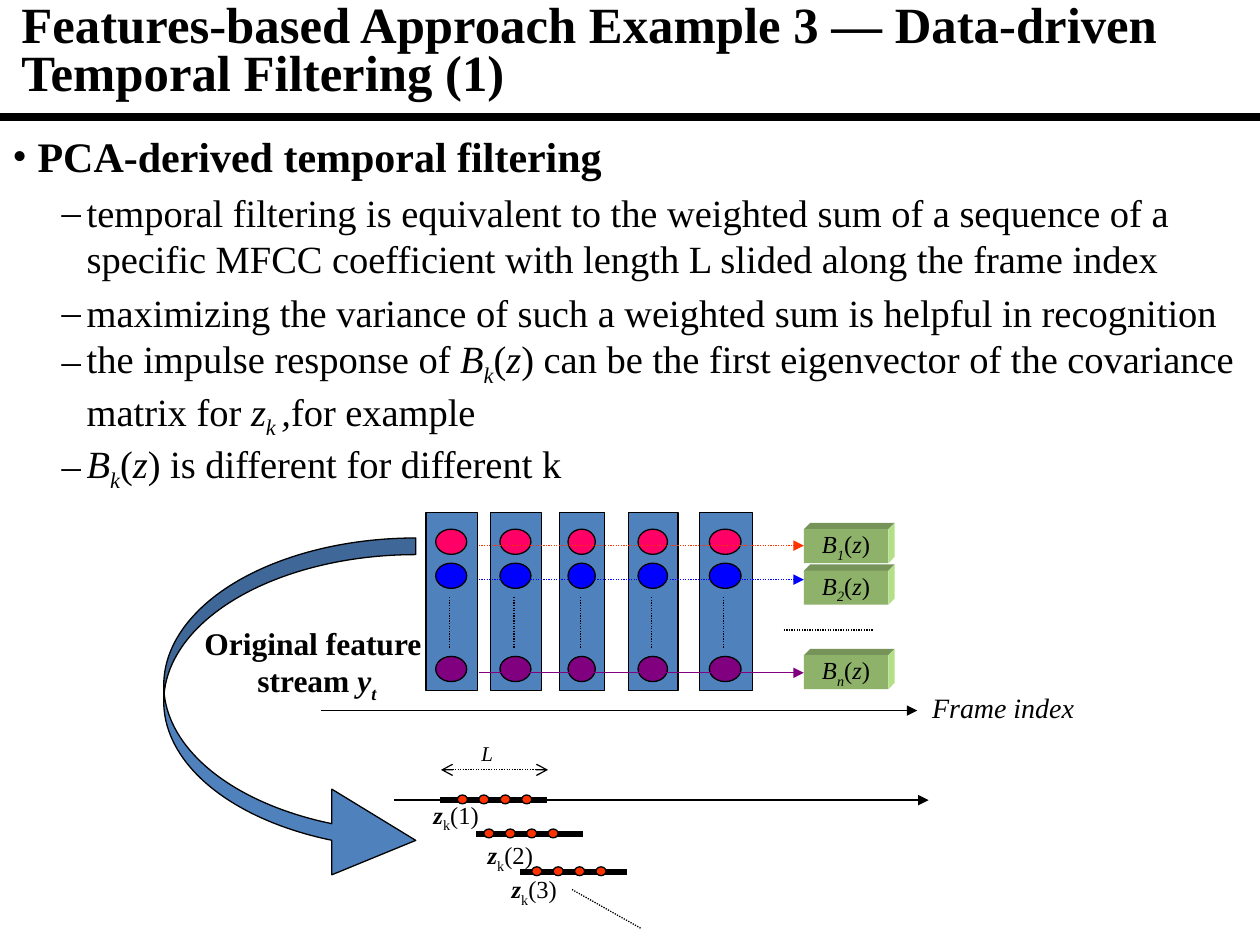
from lxml.etree import SubElement
from pptx import Presentation
from pptx.dml.color import RGBColor
from pptx.enum.dml import MSO_LINE as Dash
from pptx.enum.shapes import MSO_CONNECTOR as Connector, MSO_SHAPE as Shape
from pptx.enum.text import MSO_ANCHOR as Anchor, PP_ALIGN as Align
from pptx.oxml.ns import qn
from pptx.util import Emu, Inches, Pt

COLORS = {
    "black": "000000", "column": "4F81BD", "pink": "FF0066", "blue": "0000FF",
    "purple": "800080", "orange": "FF3300", "front": "8FB26B",
    "top": "76945A", "side": "B3DF86",
}
STYLES = {
    "": {}, "b": {"bold": True}, "i": {"italic": True},
    "bi": {"bold": True, "italic": True},
}
BULLETS = [
    (0, "•", 4.8, [("PCA-derived temporal filtering", "b")]),
    (1, "–", 4.4, [("temporal filtering is equivalent to the weighted sum of a sequence of a "
                    "specific MFCC coefficient with length L slided along the frame index", "")]),
    (1, "–", 4.4, [("maximizing the variance of such a weighted sum is helpful in recognition", "")]),
    (1, "–", 0, [("the impulse response of ", ""), ("B", "i"), ("k", "i_"), ("(", ""), ("z", "i"),
                 (") can be the first eigenvector of the covariance matrix for ", ""),
                 ("z", "i"), ("k ", "i_"), (",", "i"), ("for example", "")]),
    (1, "–", 0, [("B", "i"), ("k", "i_"), ("(", ""), ("z", "i"),
                 (") is different for different k", "")]),
]
COLUMNS = [(3.38, 0.41), (3.89, 0.41), (4.44, 0.36), (4.99, 0.39), (5.55, 0.42)]
FEATURES = [("pink", 4.2), ("blue", 4.47), ("purple", 5.21)]
FILTERS = [("1", 4.2, "orange", Dash.ROUND_DOT), ("2", 4.53, "blue", Dash.ROUND_DOT),
           ("n", 5.2, "purple", None)]
FILTER_ARROWS = [4.33, 4.6, 5.34]
WINDOWS = [("(1)", 3.49, 6.35, 3.63, 3.44, 6.35), ("(2)", 3.78, 6.62, 3.84, 3.87, 6.67),
           ("(3)", 4.13, 6.92, 4.22, 4.06, 6.94)]


class SlideBuilder:
    """Draw styled elements on one slide."""

    font_name = "Times New Roman"

    def __init__(self, slide):
        self.slide = slide

    def color(self, name):
        return RGBColor.from_string(COLORS[name])

    def add_runs(self, paragraph, runs, size):
        for text, style in runs:
            if text == "\n":
                paragraph.add_line_break()
                continue
            run = paragraph.add_run()
            run.text = text
            values = {"name": self.font_name, "size": Pt(size), "bold": False, "italic": False}
            values.update(STYLES[style.rstrip("_")])
            for key, value in values.items():
                setattr(run.font, key, value)
            run.font.color.rgb = self.color("black")
            if style.endswith("_"):
                run._r.get_or_add_rPr().set("baseline", "-25000")

    def title(self, box, text, size):
        shape = self.slide.shapes.title
        shape.left, shape.top, shape.width, shape.height = map(Inches, box)
        frame = shape.text_frame
        frame.vertical_anchor = Anchor.MIDDLE
        paragraph = frame.paragraphs[0]
        paragraph.alignment = Align.LEFT
        paragraph.line_spacing = 0.8
        self.add_runs(paragraph, [(text, "b")], size)

    def bullets(self, box, items):
        frame = self.slide.shapes.add_textbox(*map(Inches, box)).text_frame
        frame.word_wrap = True
        for index, (level, mark, space, runs) in enumerate(items):
            paragraph = frame.add_paragraph() if index else frame.paragraphs[0]
            paragraph.level = level
            paragraph.space_before = Pt(space)
            properties = paragraph._p.get_or_add_pPr()
            properties.set("marL", str(Inches((0.2, 0.59)[level])))
            properties.set("indent", str(Inches(-0.2)))
            SubElement(properties, qn("a:buFont")).set("typeface", self.font_name)
            SubElement(properties, qn("a:buChar")).set("char", mark)
            self.add_runs(paragraph, runs, (24, 22)[level])

    def text(self, box, runs, size, align=Align.LEFT, wrap=False, inset=None):
        frame = self.slide.shapes.add_textbox(*map(Inches, box)).text_frame
        frame.word_wrap = wrap
        if inset is not None:
            for side in ("left", "right", "top", "bottom"):
                setattr(frame, f"margin_{side}", Inches(inset))
        frame.paragraphs[0].alignment = align
        self.add_runs(frame.paragraphs[0], runs, size)

    def paint(self, shape, fill, outlined):
        shape.shadow.inherit = False
        shape.fill.solid()
        shape.fill.fore_color.rgb = self.color(fill)
        if outlined:
            shape.line.color.rgb = self.color("black")
            shape.line.width = Pt(0.75)
        else:
            shape.line.fill.background()

    def shape(self, kind, box, fill, outlined=True, adjustments=()):
        shape = self.slide.shapes.add_shape(kind, *map(Inches, box))
        for index, value in enumerate(adjustments):
            shape.adjustments[index] = value
        self.paint(shape, fill, outlined)
        return shape

    def polygon(self, points, fill):
        corners = [(Inches(x), Inches(y)) for x, y in points]
        builder = self.slide.shapes.build_freeform(*corners[0])
        builder.add_line_segments(corners[1:], close=True)
        self.paint(builder.convert_to_shape(Emu(0), Emu(0)), fill, False)

    def block(self, box, runs, size, depth=0.05):
        left, top, width, height = box
        right, bottom = left + width, top + height
        back_right, back_top = right + depth, top - depth
        self.polygon([(left, top), (left + depth, back_top), (back_right, back_top), (right, top)], "top")
        self.polygon([(right, top), (back_right, back_top), (back_right, bottom - depth),
                      (right, bottom)], "side")
        frame = self.shape(Shape.RECTANGLE, box, "front", outlined=False).text_frame
        frame.word_wrap = False
        frame.vertical_anchor = Anchor.MIDDLE
        frame.paragraphs[0].alignment = Align.CENTER
        self.add_runs(frame.paragraphs[0], runs, size)

    def line(self, start, end, color="black", width=0.75, dash=None, head=None, tail=None):
        connector = self.slide.shapes.add_connector(Connector.STRAIGHT, *map(Inches, start + end))
        connector.line.color.rgb = self.color(color)
        connector.line.width = Pt(width)
        if dash:
            connector.line.dash_style = dash
        for tag, kind in (("a:headEnd", head), ("a:tailEnd", tail)):
            if kind:
                SubElement(connector.line._ln, qn(tag)).set("type", kind)
        SubElement(connector._element.spPr, qn("a:effectLst"))


def main():
    presentation = Presentation()
    presentation.slide_width, presentation.slide_height = Inches(10), Inches(7.5)
    builder = SlideBuilder(presentation.slides.add_slide(presentation.slide_layouts[5]))
    dotted = Dash.ROUND_DOT

    builder.title((0.07, 0.04, 9.93, 0.76),
                  "Features-based Approach Example 3 ― Data-driven Temporal Filtering (1)", 29)
    builder.line((0, 0.93), (10, 0.93), width=4.5)
    builder.bullets((0, 0.99, 10, 2.9), BULLETS)

    for left, width in COLUMNS:
        builder.shape(Shape.RECTANGLE, (left, 4.07, width, 1.41), "column")
        for color, top in FEATURES:
            builder.shape(Shape.FLOWCHART_CONNECTOR,
                          (left + 0.19 * width, top, 0.6 * width, 0.2), color)
        middle = left + 0.46 * width
        builder.line((middle, 4.74), (middle, 5.14), dash=dotted)

    for (index, top, color, dash), level in zip(FILTERS, FILTER_ARROWS):
        builder.line((3.8, level), (6.38, level), color, dash=dash, tail="triangle")
        builder.block((6.38, top, 0.67, 0.27),
                      [("B", "i"), (index, "i_"), ("(", ""), ("z", "i"), (")", "")], 14)
    builder.line((6.22, 5), (6.93, 5), dash=dotted)

    builder.line((2.55, 5.64), (7.28, 5.64), tail="triangle")
    builder.text((7.3, 5.43, 1.33, 0.37), [("Frame index", "i")], 16)

    builder.line((3.13, 6.35), (7.37, 6.35), tail="triangle")
    builder.line((3.5, 6.11), (4.35, 6.11), dash=dotted, head="arrow", tail="arrow")
    builder.text((3.82, 5.88, 0.48, 0.34), [("L", "i")], 12, wrap=True, inset=0)
    for number, left, level, first_dot, label_left, label_top in WINDOWS:
        builder.line((left, level), (left + 0.85, level), width=3)
        builder.text((label_left, label_top, 0.61, 0.28),
                     [("z", "bi"), ("k", "_"), (number, "")], 14, wrap=True, inset=0)
        for step in range(4):
            builder.shape(Shape.OVAL, (first_dot + step * 0.17, level - 0.04, 0.08, 0.07), "orange")
    builder.line((4.54, 7.06), (5.09, 7.37), dash=dotted)

    builder.shape(Shape.CURVED_RIGHT_ARROW, (1.3, 4.27, 2, 2.74), "column",
                  adjustments=(0.066, 0.34, 0.333))
    builder.text((1.52, 4.9, 1.99, 0.7),
                 [("Original feature ", "b"), ("\n", ""), ("stream ", "b"), ("y", "bi"), ("t", "bi_")],
                 18, align=Align.CENTER)
    presentation.save("out.pptx")


if __name__ == "__main__":
    main()
